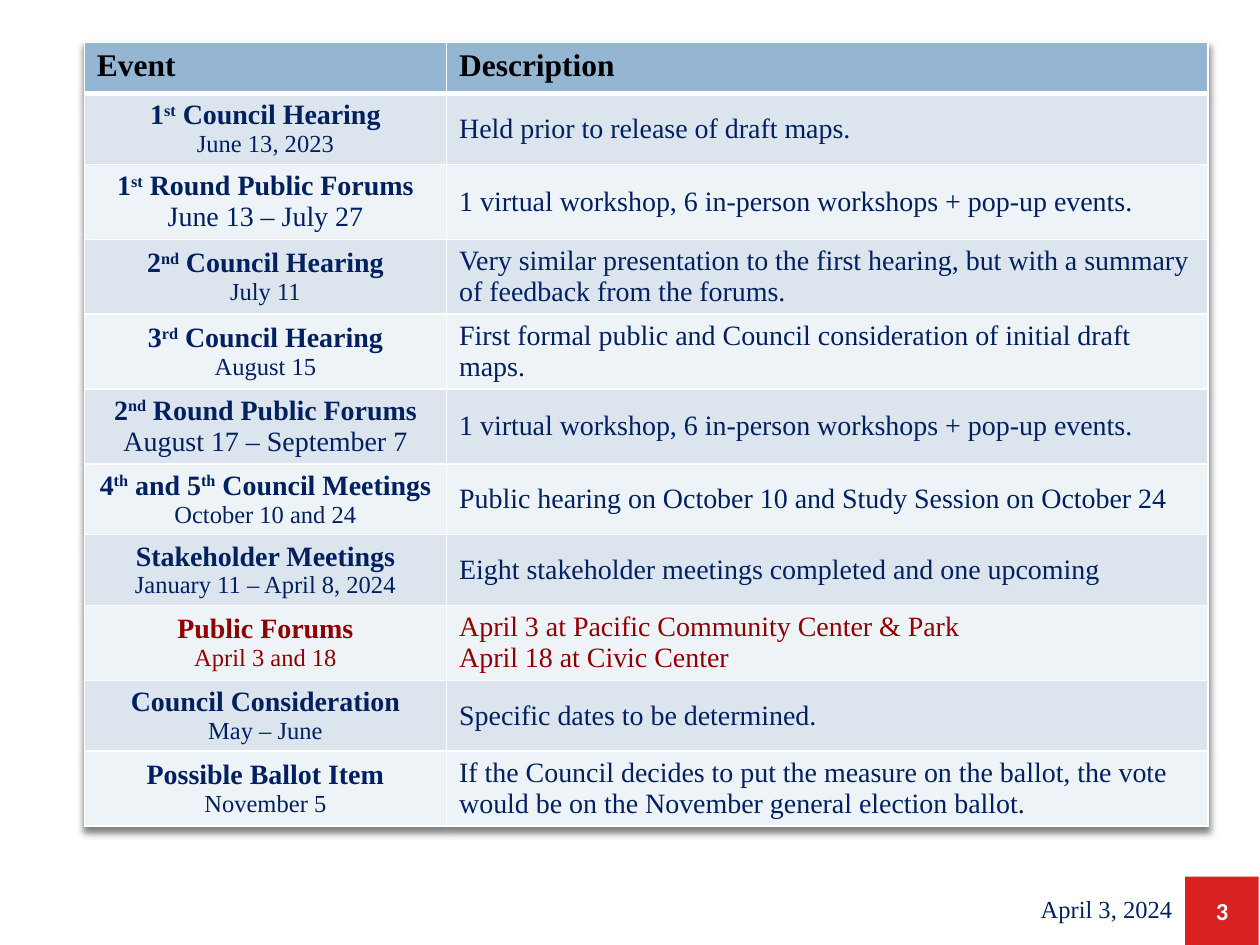
from lxml.etree import SubElement
from pptx import Presentation
from pptx.dml.color import RGBColor
from pptx.enum.shapes import MSO_SHAPE
from pptx.enum.text import MSO_ANCHOR as Anchor, PP_ALIGN as Align
from pptx.oxml import parse_xml
from pptx.oxml.ns import nsdecls, qn
from pptx.util import Pt

COLORS = {
    "navy": "002060", "dark_red": "8F0000", "red": "D92121",
    "header": "94B6D2", "band_dark": "DCE5EE", "band_light": "EEF3F7",
    "white": "FFFFFF", "black": "000000",
}
FONT = "Times New Roman"
HEADER_HEIGHT, SHORT_ROW, TALL_ROW = 29.5, 40.3, 42.8

# Event (^ marks superscript), date, date size, description, row height, colour
EVENTS = [
    ("1^st^ Council Hearing", "June 13, 2023", 14,
     "Held prior to release of draft maps.", SHORT_ROW, "navy"),
    ("1^st^ Round Public Forums", "June 13 – July 27", 16,
     "1 virtual workshop, 6 in-person workshops + pop-up events.", TALL_ROW, "navy"),
    ("2^nd^ Council Hearing", "July 11", 14,
     "Very similar presentation to the first hearing, but with a summary "
     "of feedback from the forums.", TALL_ROW, "navy"),
    ("3^rd^ Council Hearing", "August 15", 14,
     "First formal public and Council consideration of initial draft maps.",
     TALL_ROW, "navy"),
    ("2^nd^ Round Public Forums", "August 17 – September 7", 16,
     "1 virtual workshop, 6 in-person workshops + pop-up events.", TALL_ROW, "navy"),
    ("4^th^ and 5^th^ Council Meetings", "October 10 and 24", 14,
     "Public hearing on October 10 and Study Session on October 24", SHORT_ROW, "navy"),
    ("Stakeholder Meetings", "January 11 – April 8, 2024", 14,
     "Eight stakeholder meetings completed and one upcoming", SHORT_ROW, "navy"),
    ("Public Forums", "April 3 and 18", 14,
     "April 3 at Pacific Community Center & Park\nApril 18 at Civic Center",
     TALL_ROW, "dark_red"),
    ("Council Consideration", "May – June", 14,
     "Specific dates to be determined.", SHORT_ROW, "navy"),
    ("Possible Ballot Item", "November 5", 14,
     "If the Council decides to put the measure on the ballot, the vote "
     "would be on the November general election ballot.", TALL_ROW, "navy"),
]


def rgb(name):
    return RGBColor.from_string(COLORS[name])


def write(frame, text, size=16, color="navy", bold=False, font=FONT,
          align=Align.LEFT, append=False):
    """Write one paragraph per line; text between ^ marks is superscript."""
    for number, line in enumerate(text.split("\n")):
        new = append or number > 0
        para = frame.add_paragraph() if new else frame.paragraphs[0]
        para.alignment = align
        for index, piece in enumerate(line.split("^")):
            if not piece:
                continue
            span = para.add_run()
            span.text = piece
            span.font.name = font
            span.font.size = Pt(size)
            span.font.bold = bold
            span.font.color.rgb = rgb(color)
            if index % 2:
                span.font._element.set("baseline", "30000")


def style_cell(cell, fill, top=1, bottom=1):
    """Fill a cell and give it white borders."""
    cell.fill.solid()
    cell.fill.fore_color.rgb = rgb(fill)
    properties = cell._tc.get_or_add_tcPr()
    widths = {"lnL": 1, "lnR": 1, "lnT": top, "lnB": bottom}
    for index, (side, width) in enumerate(widths.items()):
        line = SubElement(properties, qn(f"a:{side}"), w=str(Pt(width)))
        solid = SubElement(line, qn("a:solidFill"))
        SubElement(solid, qn("a:srgbClr"), val=COLORS["white"])
        properties.insert(index, line)


def add_table_shadow(table):
    table._tbl.tblPr.insert(0, parse_xml(
        f'<a:effectLst {nsdecls("a")}>'
        f'<a:outerShdw blurRad="{Pt(4)}" dist="{Pt(3)}" dir="5400000" rotWithShape="0">'
        f'<a:srgbClr val="{COLORS["black"]}"><a:alpha val="50000"/></a:srgbClr>'
        '</a:outerShdw></a:effectLst>'))


def add_schedule(page):
    heights = [HEADER_HEIGHT] + [event[4] for event in EVENTS]
    table = page.shapes.add_table(len(heights), 2, Pt(48.2), Pt(24),
                                  Pt(642.2), Pt(sum(heights))).table
    for column, width in zip(table.columns, (207, 435.2)):
        column.width = Pt(width)
    for row, height in zip(table.rows, heights):
        row.height = Pt(height)
    add_table_shadow(table)

    # Header
    for index, label in enumerate(("Event", "Description")):
        cell = table.cell(0, index)
        style_cell(cell, "header", bottom=3)
        write(cell.text_frame, label, size=18, color="black", bold=True)

    # Events
    for row, (event, date, size, description, _, color) in enumerate(EVENTS, 1):
        name_cell, description_cell = table.cell(row, 0), table.cell(row, 1)
        for cell in (name_cell, description_cell):
            style_cell(cell, "band_dark" if row % 2 else "band_light",
                       top=3 if row == 1 else 1)
            cell.vertical_anchor = Anchor.MIDDLE
        write(name_cell.text_frame, event, color=color, bold=True, align=Align.CENTER)
        write(name_cell.text_frame, date, size=size, color=color,
              align=Align.CENTER, append=True)
        write(description_cell.text_frame, description, color=color)


def add_page_number(page):
    box = page.shapes.add_shape(MSO_SHAPE.RECTANGLE, Pt(677.3), Pt(501),
                                Pt(42), Pt(39))
    box.shadow.inherit = False
    box.fill.solid()
    box.fill.fore_color.rgb = rgb("red")
    box.line.fill.background()
    box.text_frame.vertical_anchor = Anchor.MIDDLE
    write(box.text_frame, "3", size=14, color="white", bold=True,
          font="Calibri", align=Align.CENTER)


def add_date(page):
    box = page.shapes.add_textbox(Pt(467), Pt(505), Pt(210), Pt(29))
    box.text_frame.word_wrap = True
    box.text_frame.vertical_anchor = Anchor.MIDDLE
    write(box.text_frame, "April 3, 2024", size=14, align=Align.RIGHT)


def main():
    deck = Presentation()
    deck.slide_width, deck.slide_height = Pt(720), Pt(540)
    page = deck.slides.add_slide(deck.slide_layouts[6])
    add_page_number(page)
    add_schedule(page)
    add_date(page)
    deck.save("out.pptx")


if __name__ == "__main__":
    main()
